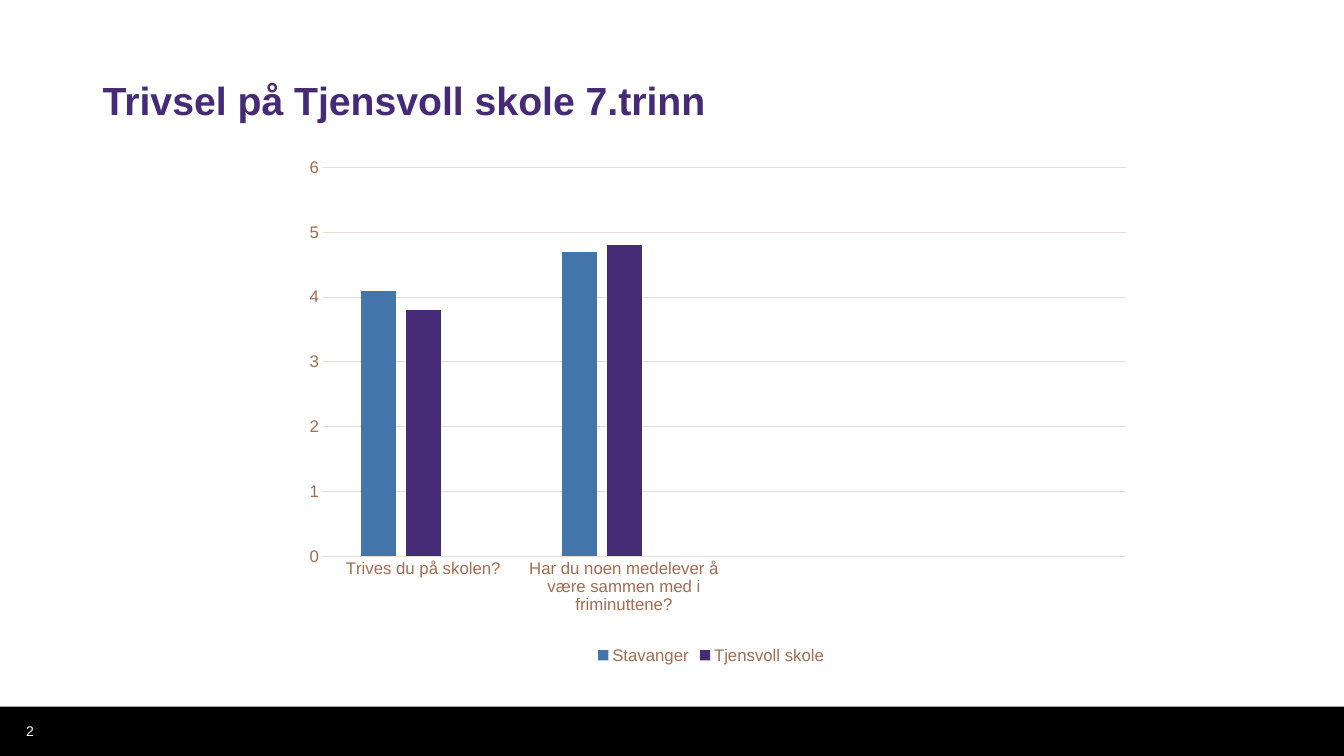
"""Build the school well-being slide with its column chart."""

from dataclasses import dataclass

from pptx import Presentation
from pptx.chart.data import CategoryChartData
from pptx.dml.color import RGBColor
from pptx.enum.chart import XL_CHART_TYPE as Kind
from pptx.enum.chart import XL_LEGEND_POSITION as Place
from pptx.enum.chart import XL_TICK_MARK as Tick
from pptx.enum.shapes import MSO_SHAPE as Form
from pptx.enum.text import MSO_ANCHOR as Anchor
from pptx.oxml import parse_xml
from pptx.oxml.ns import nsdecls
from pptx.util import Emu, Pt

SCALE = 9144
FONT = "Arial"
PURPLE = "452B75"
BROWN = "A26D52"
SAND = "EADDD6"


@dataclass(frozen=True)
class Box:
    """A frame on the slide in px."""

    left: int
    top: int
    width: int
    height: int

    def emu(self) -> list[Emu]:
        """Return the four lengths in EMU."""
        return [px(n) for n in (self.left, self.top, self.width, self.height)]


@dataclass(frozen=True)
class Group:
    """One column series of the chart."""

    name: str
    values: tuple
    color: str


GROUPS = [
    Group("Stavanger", (4.1, 4.7, None, None), "4375AA"),
    Group("Tjensvoll skole", (3.8, 4.8, None, None), PURPLE),
    Group("Series 3", (None,) * 4, "FF5645"),
]
TOPICS = [
    "Trives du på skolen?",
    "Har du noen medelever å være sammen med i friminuttene?",
    "",
    "",
]
PLOT = {"x": 0.041, "y": 0.105, "w": 0.949, "h": 0.695}


def px(n: int) -> Emu:
    """Turn px into EMU."""
    return Emu(n * SCALE)


def rgb(color: str) -> RGBColor:
    """Turn a hex string into a colour."""
    return RGBColor.from_string(color)


def style(font, size: int, color: str, bold: bool = False) -> None:
    """Set the look of a font."""
    font.name = FONT
    font.size = Pt(size)
    font.bold = bold
    font.color.rgb = rgb(color)


def write(slide, text: str, box: Box, *, size: int, color: str,
          bold: bool = False, anchor=Anchor.MIDDLE, space: float = 1.0) -> None:
    """Add a text box in the given format."""
    frame = slide.shapes.add_textbox(*box.emu()).text_frame
    frame.word_wrap = True
    frame.vertical_anchor = anchor
    para = frame.paragraphs[0]
    para.line_spacing = space
    run = para.add_run()
    run.text = text
    style(run.font, size, color, bold)


def band(slide, box: Box, color: str) -> None:
    """Add a plain filled bar."""
    bar = slide.shapes.add_shape(Form.RECTANGLE, *box.emu())
    bar.shadow.inherit = False
    bar.fill.solid()
    bar.fill.fore_color.rgb = rgb(color)
    bar.line.fill.background()


def rule(line) -> None:
    """Give an axis or grid line its thin sand stroke."""
    line.color.rgb = rgb(SAND)
    line.width = Pt(0.75)


def dress(chart) -> None:
    """Format both axes of the chart."""
    for axis in (chart.category_axis, chart.value_axis):
        axis.major_tick_mark = axis.minor_tick_mark = Tick.NONE
        style(axis.tick_labels.font, 12, BROWN)
    rule(chart.category_axis.format.line)
    scale = chart.value_axis
    scale.minimum_scale, scale.maximum_scale, scale.major_unit = 0, 6, 1
    scale.format.line.fill.background()
    scale.has_major_gridlines = True
    rule(scale.major_gridlines.format.line)


def legend(chart, hidden: int) -> None:
    """Put the legend below, without the hidden entry."""
    chart.has_legend = True
    key = chart.legend
    key.position = Place.BOTTOM
    key.include_in_layout = False
    style(key.font, 12, BROWN)
    entry = parse_xml(
        f'<c:legendEntry {nsdecls("c")}><c:idx val="{hidden}"/>'
        '<c:delete val="1"/></c:legendEntry>')
    key._element.insert(1, entry)


def arrange(chart) -> None:
    """Fix the inner plot area within the chart."""
    area = chart.plots[0]._element.getparent()
    for old in area.findall("{*}layout"):
        area.remove(old)
    modes = "".join(f'<c:{k}Mode val="edge"/>' for k in "xy")
    sizes = "".join(f'<c:{k} val="{v}"/>' for k, v in PLOT.items())
    area.insert(0, parse_xml(
        f'<c:layout {nsdecls("c")}><c:manualLayout>'
        f'<c:layoutTarget val="inner"/>{modes}{sizes}'
        '</c:manualLayout></c:layout>'))


def graph(slide, box: Box) -> None:
    """Add the clustered column chart."""
    data = CategoryChartData()
    data.categories = TOPICS
    for group in GROUPS:
        data.add_series(group.name, group.values)
    chart = slide.shapes.add_chart(
        Kind.COLUMN_CLUSTERED, *box.emu(), data).chart
    chart.has_title = False
    style(chart.font, 10, "432D22")
    plot = chart.plots[0]
    plot.vary_by_categories = False
    plot.gap_width, plot.overlap = 219, -27
    for bars, group in zip(plot.series, GROUPS):
        bars.format.fill.solid()
        bars.format.fill.fore_color.rgb = rgb(group.color)
    dress(chart)
    legend(chart, len(GROUPS) - 1)
    arrange(chart)


def main() -> None:
    """Build and save the slide."""
    deck = Presentation()
    deck.slide_width, deck.slide_height = px(1333), px(750)
    slide = deck.slides.add_slide(deck.slide_layouts[6])
    band(slide, Box(0, 701, 1333, 49), "000000")
    write(slide, "Trivsel på Tjensvoll skole 7.trinn", Box(92, 54, 1150, 74),
          size=28, color=PURPLE, bold=True, anchor=Anchor.BOTTOM, space=0.9)
    write(slide, "2", Box(16, 705, 52, 40), size=10, color="FFFFFF")
    graph(slide, Box(286, 108, 839, 555))
    deck.save("out.pptx")


if __name__ == "__main__":
    main()
